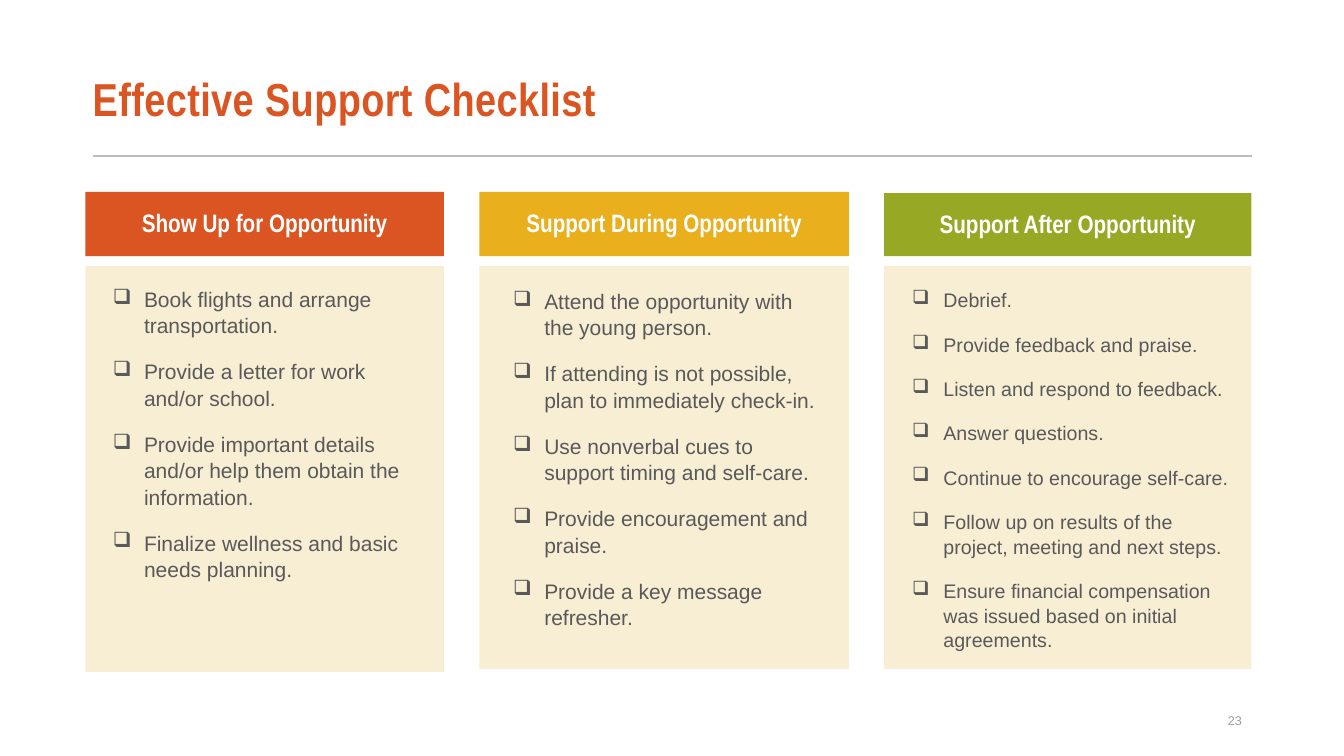
from lxml.etree import SubElement
from pptx import Presentation
from pptx.dml.color import RGBColor
from pptx.enum.shapes import MSO_CONNECTOR, MSO_SHAPE
from pptx.enum.text import MSO_ANCHOR, PP_ALIGN
from pptx.oxml.ns import qn
from pptx.util import Pt

TITLE = "Effective Support Checklist"
PAGE = "23"
COLUMNS = [
    dict(head="Show Up for Opportunity", color="DA5521", size=15,
         left=61, width=256, head_top=137, card_h=290,
         text_left=80.6, text_top=203.8, text_w=216,
         items=["Book flights and arrange transportation.",
                "Provide a letter for work and/or school.",
                "Provide important details and/or help them obtain the information.",
                "Finalize wellness and basic needs planning."]),
    dict(head="Support During Opportunity", color="E9AF1D", size=15,
         left=342.4, width=264, head_top=137, card_h=288,
         text_left=366.5, text_top=205.2, text_w=220.3,
         items=["Attend the opportunity with the young person.",
                "If attending is not possible, plan to immediately check-in.",
                "Use nonverbal cues to support timing and self-care.",
                "Provide encouragement and praise.",
                "Provide a key message refresher."]),
    dict(head="Support After Opportunity", color="97A825", size=14,
         left=631.5, width=262.5, head_top=138, card_h=288,
         text_left=651.6, text_top=205.2, text_w=234.7,
         items=["Debrief.",
                "Provide feedback and praise.",
                "Listen and respond to feedback.",
                "Answer questions.",
                "Continue to encourage self-care.",
                "Follow up on results of the project, meeting and next steps.",
                "Ensure financial compensation was issued based on initial agreements."]),
]
THEME = dict(title="DA5521", card="F7EED4", body="595959", white="FFFFFF",
             rule="BDBDBD", page="9B9B9B", head_font="Arial Narrow", body_font="Arial",
             title_size=33, head_size=18, page_size=9)
HEAD_BOTTOM, CARD_TOP, INDENT = 183, 190, 22.3


def rgb(name):
    return RGBColor.from_string(name)


def add_rect(s, left, top, width, height, color):
    sp = s.shapes.add_shape(MSO_SHAPE.RECTANGLE, Pt(left), Pt(top), Pt(width), Pt(height))
    sp.shadow.inherit = False
    sp.fill.solid()
    sp.fill.fore_color.rgb = rgb(color)
    sp.line.fill.background()
    return sp


def add_box(s, left, top, width, height):
    return s.shapes.add_textbox(Pt(left), Pt(top), Pt(width), Pt(height))


def setup(sp, anchor=MSO_ANCHOR.MIDDLE, insets=(0, 0, 0, 0)):
    tf = sp.text_frame
    tf.word_wrap = True
    tf.vertical_anchor = anchor
    tf.margin_left, tf.margin_top, tf.margin_right, tf.margin_bottom = map(Pt, insets)
    return tf


def add_run(p, text, size, color, font, bold=False):
    r = p.add_run()
    r.text = text
    r.font.size = Pt(size)
    r.font.name = font
    r.font.bold = bold
    r.font.color.rgb = rgb(color)
    return r


def add_bullet(p):
    pPr = p._p.get_or_add_pPr()
    pPr.set("marL", str(Pt(INDENT)))
    pPr.set("indent", str(-Pt(INDENT)))
    SubElement(pPr, qn("a:buChar")).set("char", "❑")


def add_column(s, col):
    add_rect(s, col["left"], CARD_TOP, col["width"], col["card_h"], THEME["card"])
    head = add_rect(s, col["left"], col["head_top"], col["width"],
                    HEAD_BOTTOM - col["head_top"], col["color"])
    p = setup(head, insets=(7.2, 3.6, 7.2, 0)).paragraphs[0]
    p.alignment = PP_ALIGN.CENTER
    p.line_spacing = Pt(15.8)
    add_run(p, col["head"], THEME["head_size"], THEME["white"], THEME["head_font"], True)

    height = CARD_TOP + col["card_h"] - col["text_top"]
    tf = setup(add_box(s, col["text_left"], col["text_top"], col["text_w"], height),
               MSO_ANCHOR.TOP)
    for i, item in enumerate(col["items"]):
        p = tf.add_paragraph() if i else tf.paragraphs[0]
        add_bullet(p)
        p.line_spacing = 1.05
        p.space_after = Pt(14)
        add_run(p, item, col["size"], THEME["body"], THEME["body_font"])


def main():
    prs = Presentation()
    prs.slide_width, prs.slide_height = Pt(960), Pt(540)
    s = prs.slides.add_slide(prs.slide_layouts[6])

    rule = s.shapes.add_connector(MSO_CONNECTOR.STRAIGHT, Pt(66.2), Pt(111.2), Pt(894.2), Pt(111.2))
    rule.line.color.rgb = rgb(THEME["rule"])
    rule.line.width = Pt(1.5)
    SubElement(rule._element.spPr, qn("a:effectLst"))

    p = setup(add_box(s, 66.2, 38.9, 828, 68.4), insets=(0, 3.6, 7.2, 3.6)).paragraphs[0]
    p.line_spacing = 0.87
    r = add_run(p, TITLE, THEME["title_size"], THEME["title"], THEME["head_font"], True)
    r._r.get_or_add_rPr().set("spc", "30")

    for col in COLUMNS:
        add_column(s, col)

    p = setup(add_box(s, 678.2, 500.4, 216, 28.8), insets=(7.2, 3.6, 7.2, 3.6)).paragraphs[0]
    p.alignment = PP_ALIGN.RIGHT
    add_run(p, PAGE, THEME["page_size"], THEME["page"], THEME["body_font"])

    prs.save("out.pptx")


if __name__ == "__main__":
    main()
